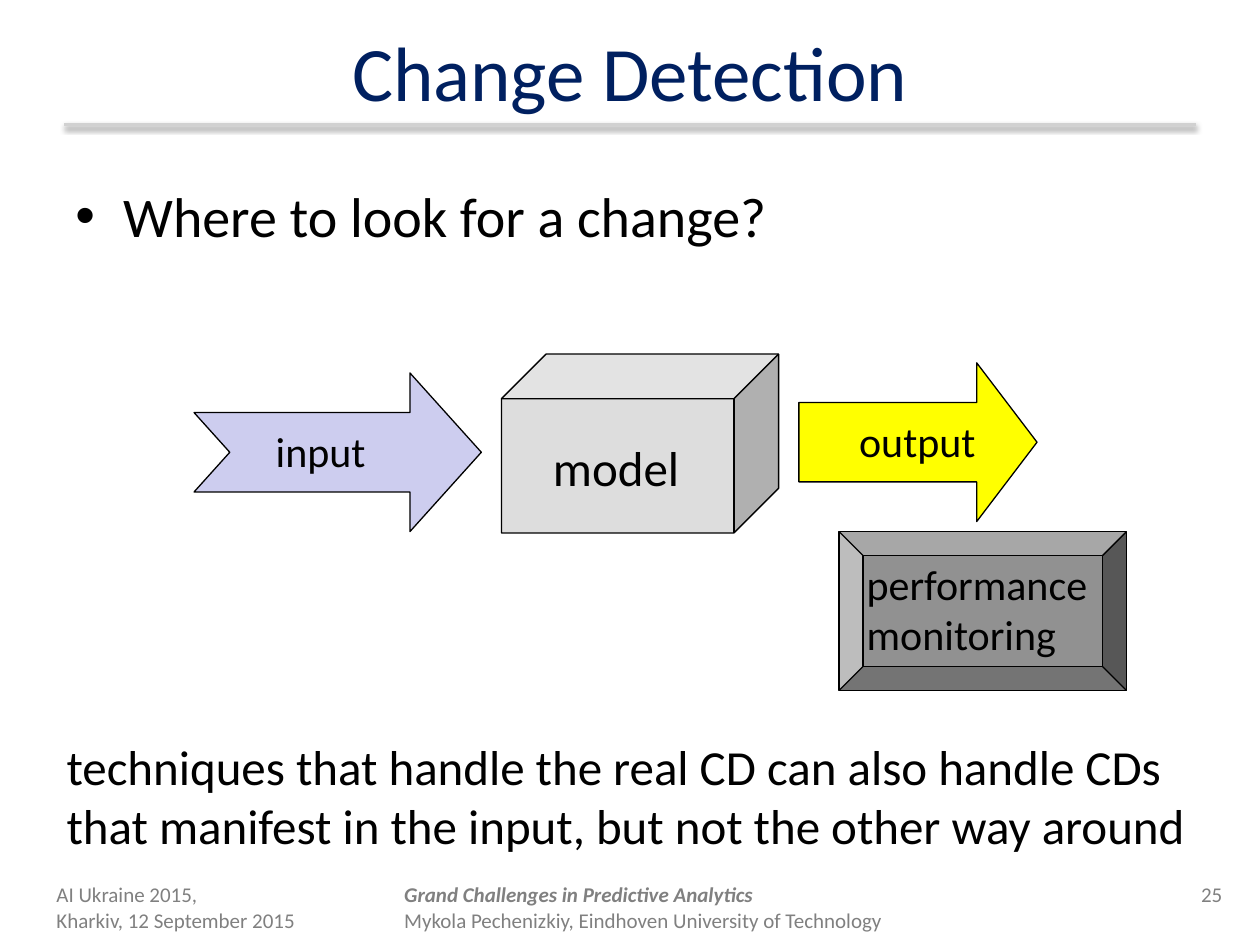
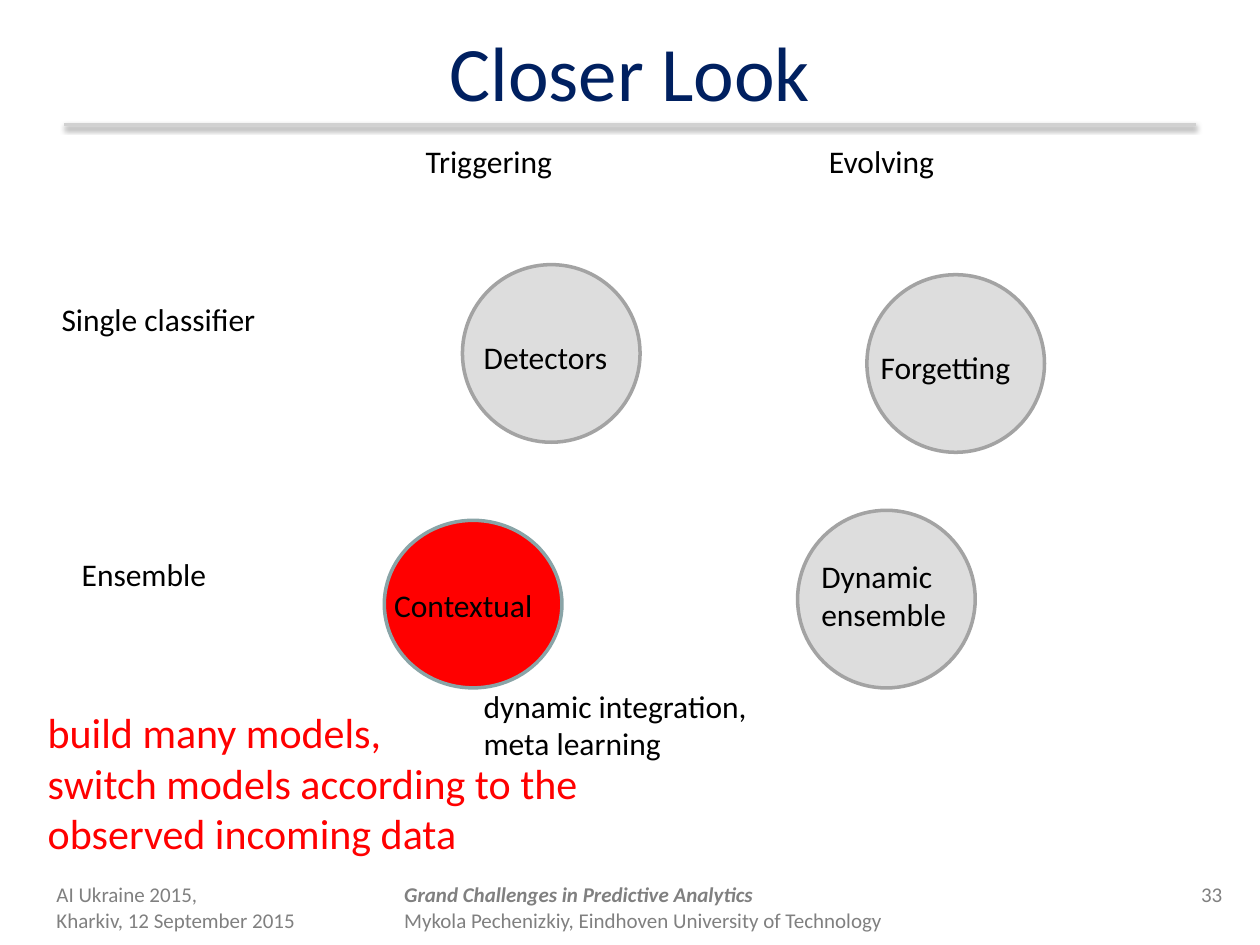
from dataclasses import dataclass

from lxml import etree
from pptx import Presentation
from pptx.dml.color import RGBColor
from pptx.enum.shapes import MSO_CONNECTOR, MSO_SHAPE
from pptx.enum.text import MSO_ANCHOR, MSO_AUTO_SIZE, PP_ALIGN
from pptx.oxml.ns import qn
from pptx.slide import Slide
from pptx.text.text import TextFrame, _Paragraph as Paragraph
from pptx.util import Inches, Pt

FONT = "Calibri"
BLACK = RGBColor(0x00, 0x00, 0x00)
WHITE = RGBColor(0xFF, 0xFF, 0xFF)
NAVY = RGBColor(0x00, 0x20, 0x60)
RED = RGBColor(0xFF, 0x00, 0x00)
YELLOW = RGBColor(0xFF, 0xFF, 0x00)
LAVENDER = RGBColor(0xCD, 0xCD, 0xEF)
LIGHT_GREY = RGBColor(0xDD, 0xDD, 0xDD)
RULE_GREY = RGBColor(0xD1, 0xD1, 0xD1)
OUTLINE_GREY = RGBColor(0xA3, 0xA3, 0xA3)
OUTLINE_TEAL = RGBColor(0x89, 0xA4, 0xA7)
MID_GREY = RGBColor(0x91, 0x91, 0x91)
FOOTER_GREY = RGBColor(0x80, 0x80, 0x80)

TITLE_ONLY = 5
FOOTER_TOP, FOOTER_HEIGHT = 6.95, 0.4


@dataclass(frozen=True)
class Box:
    left: float
    top: float
    width: float
    height: float

    def lengths(self) -> tuple[int, int, int, int]:
        return (Inches(self.left), Inches(self.top),
                Inches(self.width), Inches(self.height))


@dataclass(frozen=True)
class Label:
    box: Box
    lines: tuple[str, ...]
    size: float = 18
    color: RGBColor = BLACK
    wrap: bool = True
    grow: bool = True
    align: PP_ALIGN = PP_ALIGN.LEFT


@dataclass(frozen=True)
class Figure:
    kind: MSO_SHAPE
    box: Box
    fill: RGBColor
    outline: RGBColor = BLACK
    outline_width: float = 0.75
    adjustments: tuple[float, ...] = ()


def add_run(paragraph: Paragraph, text: str, size: float, color: RGBColor,
            emphasis: bool = False) -> None:
    run = paragraph.add_run()
    run.text = text
    run.font.name = FONT
    run.font.size = Pt(size)
    run.font.color.rgb = color
    run.font.bold = run.font.italic = emphasis


def add_label(slide: Slide, label: Label, emphasised_line: int | None = None) -> TextFrame:
    frame = slide.shapes.add_textbox(*label.box.lengths()).text_frame
    frame.word_wrap = label.wrap
    frame.auto_size = MSO_AUTO_SIZE.SHAPE_TO_FIT_TEXT if label.grow else MSO_AUTO_SIZE.NONE
    for index, line in enumerate(label.lines):
        paragraph = frame.add_paragraph() if index else frame.paragraphs[0]
        paragraph.alignment = label.align
        add_run(paragraph, line, label.size, label.color, index == emphasised_line)
    return frame


def add_figure(slide: Slide, figure: Figure) -> None:
    shape = slide.shapes.add_shape(figure.kind, *figure.box.lengths())
    shape.shadow.inherit = False
    shape.fill.solid()
    shape.fill.fore_color.rgb = figure.fill
    shape.line.color.rgb = figure.outline
    shape.line.width = Pt(figure.outline_width)
    for index, value in enumerate(figure.adjustments):
        shape.adjustments[index] = value


def add_title_rule(slide: Slide) -> None:
    rule = slide.shapes.add_connector(
        MSO_CONNECTOR.STRAIGHT, Inches(0.51), Inches(0.99), Inches(9.49), Inches(0.99))
    rule.line.color.rgb = RULE_GREY
    rule.line.width = Pt(2)
    effects = etree.SubElement(rule._element.spPr, qn("a:effectLst"))
    shadow = etree.SubElement(effects, qn("a:outerShdw"), blurRad=str(Pt(3.1)),
                              dist=str(Pt(1.6)), dir="5400000", rotWithShape="0")
    color = etree.SubElement(shadow, qn("a:srgbClr"), val=str(BLACK))
    etree.SubElement(color, qn("a:alpha"), val="38000")


def add_footer(slide: Slide, number: int) -> None:
    def footer_label(left: float, width: float, *lines: str,
                     align: PP_ALIGN = PP_ALIGN.LEFT) -> Label:
        return Label(Box(left, FOOTER_TOP, width, FOOTER_HEIGHT), lines, 12,
                     FOOTER_GREY, grow=False, align=align)

    add_label(slide, footer_label(0.35, 2.24, "AI Ukraine 2015,", "Kharkiv, 12 September 2015"))
    add_label(slide, footer_label(9.15, 0.65, str(number), align=PP_ALIGN.RIGHT))
    add_label(slide, footer_label(3.11, 6.14, "Grand Challenges in Predictive Analytics",
                                  "Mykola Pechenizkiy, Eindhoven University of Technology"),
              emphasised_line=0)


def add_titled_slide(deck: Presentation, title: str, number: int) -> Slide:
    """Add a slide with the shared background, title, rule and footer."""
    slide = deck.slides.add_slide(deck.slide_layouts[TITLE_ONLY])
    slide.background.fill.solid()
    slide.background.fill.fore_color.rgb = WHITE
    heading = slide.shapes.title
    heading.left, heading.top, heading.width, heading.height = Box(0.5, 0.05, 9, 1.02).lengths()
    heading.text_frame.vertical_anchor = MSO_ANCHOR.MIDDLE
    paragraph = heading.text_frame.paragraphs[0]
    paragraph.alignment = PP_ALIGN.CENTER
    add_run(paragraph, title, 44, NAVY)
    add_title_rule(slide)
    add_footer(slide, number)
    return slide


def add_bullet(paragraph: Paragraph, indent: float) -> None:
    properties = paragraph._p.get_or_add_pPr()
    properties.set("marL", str(Inches(indent)))
    properties.set("indent", str(-Inches(indent)))
    etree.SubElement(properties, qn("a:buFont"), typeface="Arial")
    etree.SubElement(properties, qn("a:buChar"), char="•")


def build_change_detection(deck: Presentation) -> None:
    slide = add_titled_slide(deck, "Change Detection", 25)
    question = add_label(slide, Label(Box(0.5, 1.39, 9, 5.31),
                                      ("Where to look for a change?",), 32, grow=False))
    add_bullet(question.paragraphs[0], 0.38)

    for stage in (
        Figure(MSO_SHAPE.NOTCHED_RIGHT_ARROW, Box(1.54, 2.96, 2.28, 1.26), LAVENDER,
               adjustments=(0.5, 0.45)),
        Figure(MSO_SHAPE.CUBE, Box(3.98, 2.81, 2.2, 1.42), LIGHT_GREY, adjustments=(0.25,)),
        Figure(MSO_SHAPE.RIGHT_ARROW, Box(6.34, 2.88, 1.89, 1.26), YELLOW,
               adjustments=(0.5, 0.38)),
        Figure(MSO_SHAPE.BEVEL, Box(6.66, 4.22, 2.28, 1.26), MID_GREY, adjustments=(0.15,)),
    ):
        add_figure(slide, stage)

    for label in (
        Label(Box(2.09, 3.33, 1, 0.5), ("input",), 24, wrap=False),
        Label(Box(4.29, 3.42, 1.29, 0.57), ("model",), 28, wrap=False),
        Label(Box(6.72, 3.25, 1.2, 0.5), ("output",), 24, wrap=False),
        Label(Box(6.78, 4.38, 2.08, 0.9), ("performance", "monitoring"), 24, wrap=False),
        Label(Box(0.43, 5.8, 9.49, 1.04),
              ("techniques that handle the real CD can also handle CDs that manifest "
               "in the input, but not the other way around",), 28),
    ):
        add_label(slide, label)


def build_closer_look(deck: Presentation) -> None:
    slide = add_titled_slide(deck, "Closer Look", 33)

    def add_circle(left: float, top: float, height: float = 1.41,
                   fill: RGBColor = LIGHT_GREY, outline: RGBColor = OUTLINE_GREY) -> None:
        add_figure(slide, Figure(MSO_SHAPE.OVAL, Box(left, top, 1.41, height),
                                 fill, outline, 2))

    add_circle(3.67, 2.1)
    add_circle(6.88, 2.18)
    add_circle(3.05, 4.13, 1.33, RED, OUTLINE_TEAL)
    add_circle(6.33, 4.05)

    for label in (
        Label(Box(3.28, 1.08, 2.58, 0.4), ("Triggering",)),
        Label(Box(6.48, 1.08, 2.58, 0.4), ("Evolving",)),
        Label(Box(0.39, 2.33, 2.03, 0.4), ("Single classifier",)),
        Label(Box(0.55, 4.36, 2.03, 0.4), ("Ensemble",)),
        Label(Box(3.74, 2.63, 1.48, 0.4), ("Detectors",)),
        Label(Box(6.42, 4.37, 1.25, 0.7), ("Dynamic ensemble",)),
        Label(Box(3.03, 4.6, 1.5, 0.4), ("Contextual",)),
        Label(Box(6.89, 2.71, 1.48, 0.4), ("Forgetting",)),
        Label(Box(0.28, 5.56, 4.41, 1.3),
              ("build many models,", "switch models according to the observed incoming data"),
              24, RED),
        Label(Box(3.74, 5.4, 2.64, 0.7), ("dynamic integration,", "meta learning")),
    ):
        add_label(slide, label)


def main() -> None:
    deck = Presentation()
    deck.slide_width, deck.slide_height = Inches(10), Inches(7.5)
    build_change_detection(deck)
    build_closer_look(deck)
    deck.save("out.pptx")


if __name__ == "__main__":
    main()
